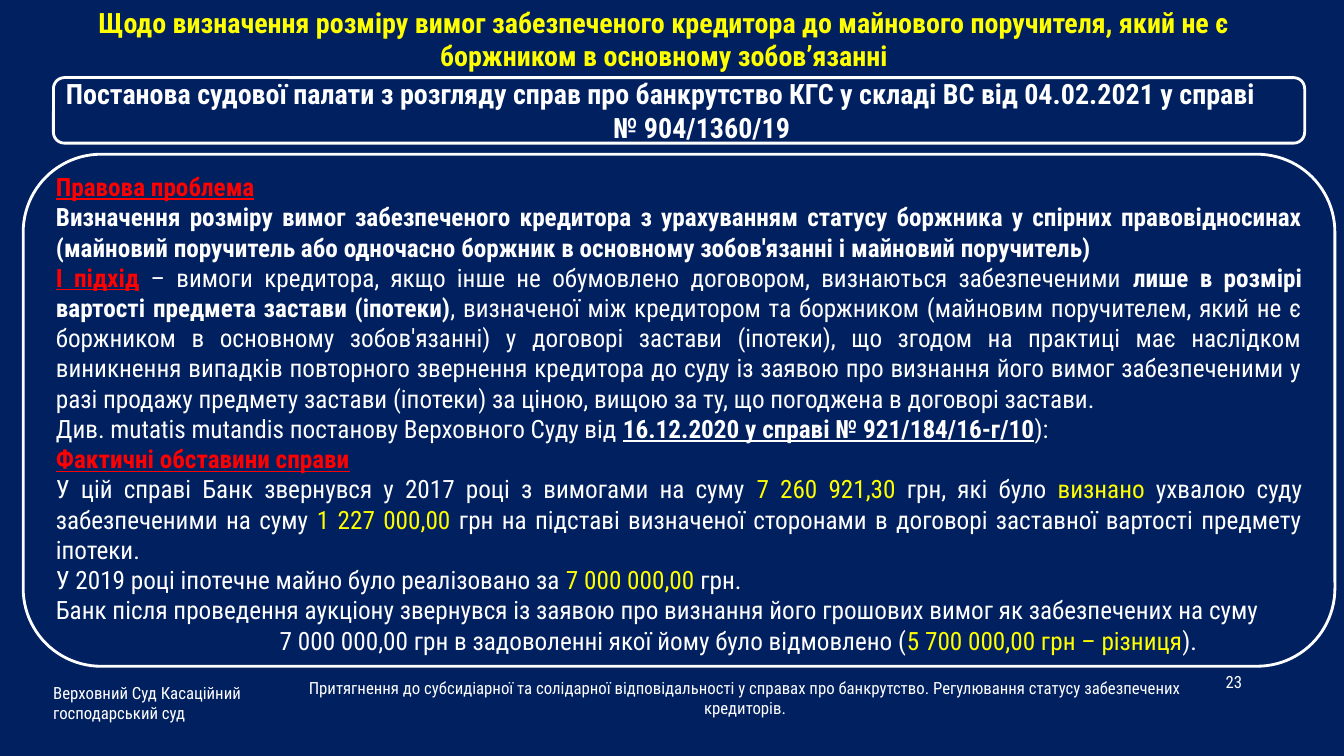
from dataclasses import dataclass

from pptx import Presentation
from pptx.dml.color import RGBColor
from pptx.enum.shapes import MSO_SHAPE
from pptx.enum.text import MSO_ANCHOR, MSO_AUTO_SIZE, PP_ALIGN
from pptx.util import Inches, Pt

LEFT, CENTER, RIGHT, JUSTIFY = PP_ALIGN.LEFT, PP_ALIGN.CENTER, PP_ALIGN.RIGHT, PP_ALIGN.JUSTIFY
TOP, MIDDLE = MSO_ANCHOR.TOP, MSO_ANCHOR.MIDDLE
ROUNDED = MSO_SHAPE.ROUNDED_RECTANGLE
TITLE_ONLY = 5


@dataclass(frozen=True)
class Theme:
    font: str = "Roboto Condensed"
    navy: RGBColor = RGBColor(0x00, 0x20, 0x60)
    white: RGBColor = RGBColor(0xFF, 0xFF, 0xFF)
    yellow: RGBColor = RGBColor(0xFF, 0xFF, 0x00)
    red: RGBColor = RGBColor(0xFF, 0x00, 0x00)
    heading: int = 20
    body: int = 18
    footer: int = 12
    outline: int = 2


THEME = Theme()

# Run styles: colour, bold, underline
PLAIN = (THEME.white, False, False)
BOLD = (THEME.white, True, False)
CITED = (THEME.white, True, True)
LABEL = (THEME.red, True, True)
AMOUNT = (THEME.yellow, False, False)
TITLE = (THEME.yellow, True, False)

# Content: each paragraph is a list of (text, style)
TITLE_TEXT = [[("Щодо визначення розміру вимог забезпеченого кредитора до майнового поручителя, "
                "який не є боржником в основному зобов’язанні", TITLE)]]
RULING = [
    [("Постанова судової палати з розгляду справ про банкрутство КГС у складі ВС "
      "від 04.02.2021 у справі", BOLD)],
    [("№ 904/1360/19", BOLD)],
]
ANALYSIS = [
    [("Правова проблема", LABEL)],
    [("Визначення розміру вимог забезпеченого кредитора з урахуванням статусу боржника у спірних "
      "правовідносинах (майновий поручитель або одночасно боржник в основному зобов'язанні "
      "і майновий поручитель)", BOLD)],
    [("I підхід", LABEL),
     (" – вимоги кредитора, якщо інше не обумовлено договором, визнаються забезпеченими ", PLAIN),
     ("лише в розмірі вартості предмета застави (іпотеки)", BOLD),
     (", визначеної між кредитором та боржником (майновим поручителем, який не є боржником "
      "в основному зобов'язанні) у договорі застави (іпотеки), що згодом на практиці має наслідком "
      "виникнення випадків повторного звернення кредитора до суду із заявою про визнання його вимог "
      "забезпеченими у разі продажу предмету застави (іпотеки) за ціною, вищою за ту, що погоджена "
      "в договорі застави.", PLAIN)],
    [("Див. mutatis mutandis постанову Верховного Суду від ", PLAIN),
     ("16.12.2020 у справі № 921/184/16-г/10", CITED), ("):", PLAIN)],
    [("Фактичні обставини справи", LABEL)],
    [("У цій справі Банк звернувся у 2017 році з вимогами на суму ", PLAIN),
     ("7 260 921,30 ", AMOUNT), ("грн, які було ", PLAIN), ("визнано", AMOUNT),
     (" ухвалою суду забезпеченими на суму ", PLAIN), ("1 227 000,00 ", AMOUNT),
     ("грн на підставі визначеної сторонами в договорі заставної вартості предмету іпотеки.", PLAIN)],
    [("У 2019 році іпотечне майно було реалізовано за ", PLAIN),
     ("7 000 000,00 ", AMOUNT), ("грн.", PLAIN)],
    [("Банк після проведення аукціону звернувся із заявою про визнання його грошових вимог "
      "як забезпечених на суму", PLAIN)],
    [("7 000 000,00 грн в задоволенні якої йому було відмовлено (", PLAIN),
     ("5 700 000,00 грн – різниця", AMOUNT), (").", PLAIN)],
]
# Footer parts: text, place, alignment
FOOTERS = [
    ("23", (9.42, 6.6, 3, 0.33), RIGHT),
    ("Верховний Суд Касаційний господарський суд", (0.43, 6.6, 2.54, 0.75), LEFT),
    ("Притягнення до субсидіарної та солідарної відповідальності у справах про банкрутство. "
     "Регулювання статусу забезпечених кредиторів.", (2.64, 6.7, 9.5, 0.45), CENTER),
]
# Panels: paragraphs, place, corner, size, alignment, (left, top, right, bottom) insets
PANELS = {
    "analysis": (ANALYSIS, (0.23, 1.53, 13.01, 5.08), 0.152, THEME.body, JUSTIFY, (0.1, 0.06, 0.1, 0)),
    "ruling": (RULING, (0.53, 0.77, 12.41, 0.65), 0.167, THEME.heading, CENTER, (0, 0, 0, 0)),
}
# Paragraph indents in inches: panel, paragraph, side, amount
INDENTS = [("analysis", -1, "marL", 2.22), ("ruling", 0, "marR", 0.36), ("ruling", 1, "marL", 0.81)]


def place_of(place):
    return [Inches(length) for length in place]


def write(box, paragraphs, size, align, anchor):
    frame = box.text_frame
    frame.word_wrap = True
    frame.auto_size = MSO_AUTO_SIZE.NONE
    frame.vertical_anchor = anchor
    for index, runs in enumerate(paragraphs):
        para = frame.add_paragraph() if index else frame.paragraphs[0]
        para.alignment = align
        for text, (color, bold, underline) in runs:
            span = para.add_run()
            span.text = text
            span.font.name = THEME.font
            span.font.size = Pt(size)
            span.font.color.rgb = color
            span.font.bold = bold
            span.font.underline = underline


def add_panel(page, paragraphs, place, corner, size, align, insets):
    panel = page.shapes.add_shape(ROUNDED, *place_of(place))
    panel.adjustments[0] = corner
    panel.shadow.inherit = False
    panel.fill.solid()
    panel.fill.fore_color.rgb = THEME.navy
    panel.line.color.rgb = THEME.white
    panel.line.width = Pt(THEME.outline)
    frame = panel.text_frame
    frame.margin_left, frame.margin_top, frame.margin_right, frame.margin_bottom = place_of(insets)
    write(panel, paragraphs, size, align, MIDDLE)
    return panel


def main():
    deck = Presentation()
    deck.slide_width, deck.slide_height = Inches(13.33), Inches(7.5)
    page = deck.slides.add_slide(deck.slide_layouts[TITLE_ONLY])
    page.background.fill.solid()
    page.background.fill.fore_color.rgb = THEME.navy

    # Title
    title = page.shapes.title
    title.left, title.top, title.width, title.height = place_of((0.23, 0, 12.71, 0.77))
    write(title, TITLE_TEXT, THEME.heading, CENTER, TOP)

    # Footer
    for text, place, align in FOOTERS:
        box = page.shapes.add_textbox(*place_of(place))
        write(box, [[(text, PLAIN)]], THEME.footer, align, MIDDLE)

    # Framed panels
    panels = {name: add_panel(page, *parts) for name, parts in PANELS.items()}
    for name, index, side, amount in INDENTS:
        para = panels[name].text_frame.paragraphs[index]
        para._p.get_or_add_pPr().set(side, str(Inches(amount)))

    deck.save("out.pptx")


if __name__ == "__main__":
    main()
